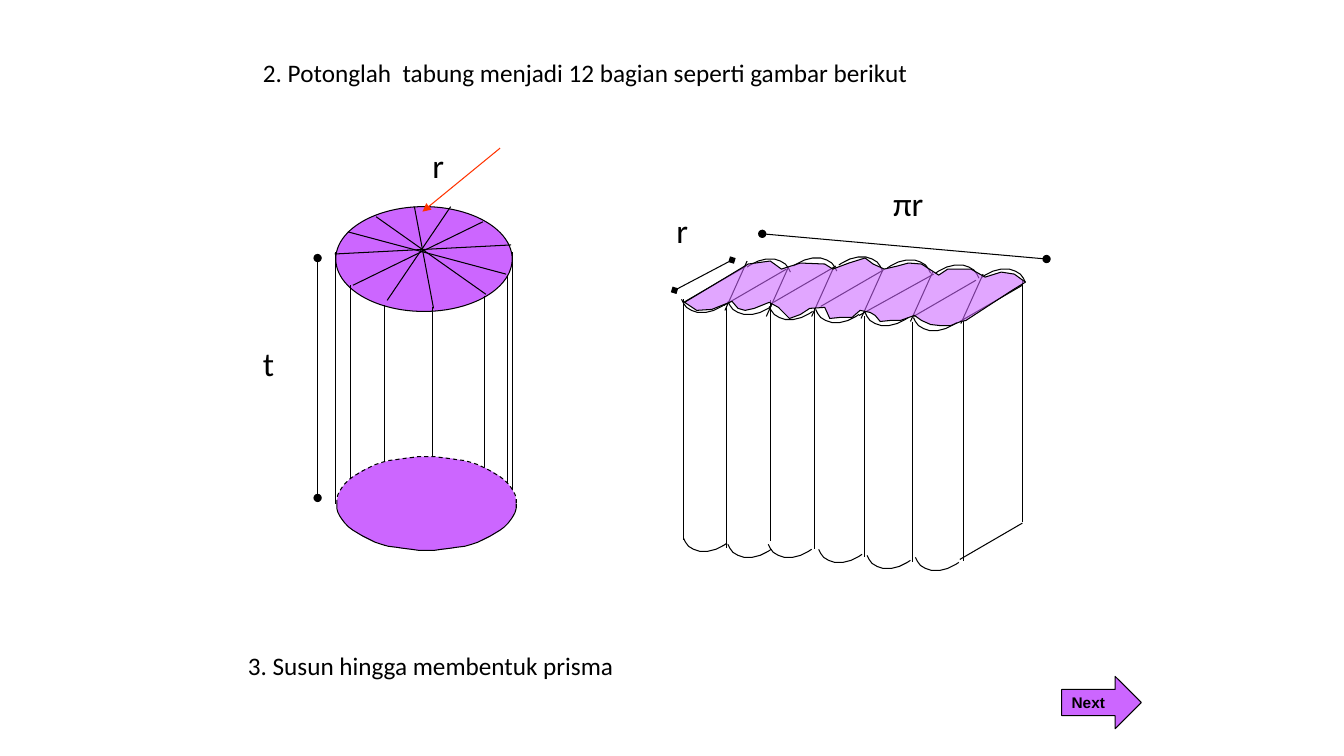
from math import cos, sin, radians
from lxml.etree import SubElement
from pptx import Presentation
from pptx.dml.color import RGBColor
from pptx.enum.dml import MSO_LINE
from pptx.enum.shapes import MSO_CONNECTOR, MSO_SHAPE
from pptx.enum.text import MSO_ANCHOR, PP_ALIGN
from pptx.oxml.ns import qn
from pptx.util import Inches, Pt

CELL = Inches(0.01)
COLS, ROWS = 1333, 750
BLACK, PURPLE, RED = "000000", "CC66FF", "FF3300"
HEIGHT = 239


def paint(s, line=BLACK, fill=None):
    if line:
        s.line.color.rgb = RGBColor.from_string(line)
        s.line.width = Pt(0.75)
    else:
        s.line.fill.background()
    if fill:
        s.fill.solid()
        s.fill.fore_color.rgb = RGBColor.from_string(fill)
    elif hasattr(s, "fill"):
        s.fill.background()
    SubElement(s._element.spPr, qn("a:effectLst"))
    return s


def connect(x1, y1, x2, y2, color=BLACK, head="none", tail="none"):
    s = shapes.add_connector(MSO_CONNECTOR.STRAIGHT, *[v * CELL for v in (x1, y1, x2, y2)])
    paint(s, color)
    ln = s.line._get_or_add_ln()
    for tag, kind in (("a:headEnd", head), ("a:tailEnd", tail)):
        SubElement(ln, qn(tag)).set("type", kind)


prs = Presentation()
prs.slide_width, prs.slide_height = COLS * CELL, ROWS * CELL
shapes = prs.slides.add_slide(prs.slide_layouts[6]).shapes

paint(shapes.add_shape(MSO_SHAPE.OVAL, 333 * CELL, 205 * CELL, 175 * CELL, 104 * CELL), BLACK, PURPLE)
spokes = [
    (373, 215, 482, 292), (350, 283, 479, 220), (345, 230, 502, 272),
    (332, 252, 507, 243), (384, 298, 447, 205), (430, 306, 411, 205),
]
for spoke in spokes:
    connect(*spoke)
for x in (333, 508):
    connect(x, 250, x, 500)
for x, y in ((503, 273), (348, 283), (381, 303), (429, 305), (481, 294)):
    connect(x, y, x, y + HEIGHT)

paint(shapes.add_shape(MSO_SHAPE.OVAL, 334 * CELL, 453 * CELL, 178 * CELL, 93 * CELL), None, PURPLE)
for first, dash in ((0, MSO_LINE.SOLID), (180, MSO_LINE.DASH)):
    rim = [(423 + 89 * cos(radians(a)), 499.5 + 46.5 * sin(radians(a)))
           for a in range(first, first + 181, 5)]
    fb = shapes.build_freeform(*rim[0], scale=CELL)
    fb.add_line_segments(rim[1:], close=False)
    paint(fb.convert_to_shape()).line.dash_style = dash

connect(315, 256, 315, 494, BLACK, "oval", "oval")
connect(496, 147, 419, 210, RED, "none", "triangle")

for x, y in ((1014, 283), (968, 278), (876, 268), (829, 264), (780, 267), (740, 264), (1014, 519)):
    connect(x, y, x - 62, y + 36)
connect(926, 272, 852, 313)
for x, y in ((975, 272), (925, 270), (876, 267), (827, 265), (782, 265), (741, 259)):
    connect(x, y, x - 22, y + 49)
for x, y in ((1014, 279), (956, 318), (905, 319), (857, 314), (808, 306), (764, 298), (721, 305), (678, 297)):
    connect(x, y, x, y + HEIGHT)

wave = [(0, 0), (2, 4), (5, 8), (10, 11), (16, 13), (24, 13), (32, 11), (36, 9), (40, 7), (43, 5)]
back_starts = [(784, 270), (830, 269), (875, 268), (923, 271), (971, 276), (1017, 280)]
front_starts = [(676, 297), (722, 299), (763, 304), (809, 307), (858, 310), (906, 315)]
base_starts = [(678, 534), (722, 540), (762, 540), (812, 545), (860, 551), (908, 553)]
for starts, sign in ((back_starts, -1), (front_starts, 1), (base_starts, 1)):
    for x, y in starts:
        fb = shapes.build_freeform(x, y, scale=CELL)
        fb.add_line_segments([(x + sign * dx, y + sign * dy) for dx, dy in wave[1:]], close=False)
        paint(fb.convert_to_shape())

prism_top = [
    (958, 318), (1004, 288), (1017, 280), (1006, 272), (993, 270), (977, 275), (963, 267),
    (953, 267), (940, 267), (931, 273), (914, 262), (901, 261), (890, 264), (877, 267),
    (866, 262), (858, 256), (842, 261), (826, 267), (818, 262), (794, 261), (775, 267),
    (764, 259), (742, 262), (679, 300), (691, 308), (706, 307), (726, 299), (732, 306),
    (739, 308), (748, 306), (763, 300), (772, 305), (783, 316), (794, 312), (803, 306),
    (818, 305), (823, 316), (833, 315), (845, 315), (853, 308), (863, 310), (868, 313),
    (873, 319), (883, 318), (893, 318), (907, 313), (914, 318), (923, 322), (932, 323),
    (943, 323), (953, 319),
]
fb = shapes.build_freeform(*prism_top[0], scale=CELL)
fb.add_line_segments(prism_top[1:], close=True)
s = paint(fb.convert_to_shape(), BLACK, PURPLE)
color = s._element.spPr.find(qn("a:solidFill")).find(qn("a:srgbClr"))
SubElement(color, qn("a:alpha")).set("val", "58000")

connect(756, 232, 1038, 257, BLACK, "oval", "oval")
connect(726, 258, 669, 288, BLACK, "diamond", "diamond")

labels = [
    ("t", 251, 335, 46, 50, 24),
    ("r", 419, 139, 42, 50, 24),
    ("πr", 876, 177, 75, 50, 24),
    ("r", 661, 203, 35, 50, 24),
    ("3. Susun hingga membentuk prisma", 236, 640, 503, 40, 18),
    ("2. Potonglah  tabung menjadi 12 bagian seperti gambar berikut", 251, 52, 857, 40, 18),
]
for text, x, y, w, h, size in labels:
    tf = shapes.add_textbox(x * CELL, y * CELL, w * CELL, h * CELL).text_frame
    tf.word_wrap = True
    p = tf.paragraphs[0]
    p.text = text
    p.font.name, p.font.size = "Calibri", Pt(size)
    p.font.color.rgb = RGBColor.from_string(BLACK)

s = shapes.add_shape(MSO_SHAPE.RIGHT_ARROW, 1053 * CELL, 671 * CELL, 79 * CELL, 52 * CELL)
paint(s, BLACK, PURPLE)
tf = s.text_frame
tf.vertical_anchor = MSO_ANCHOR.MIDDLE
p = tf.paragraphs[0]
p.text = "Next"
p.alignment = PP_ALIGN.LEFT
p.font.name, p.font.size, p.font.bold = "Arial", Pt(11), True
p.font.color.rgb = RGBColor.from_string(BLACK)

prs.save("out.pptx")
